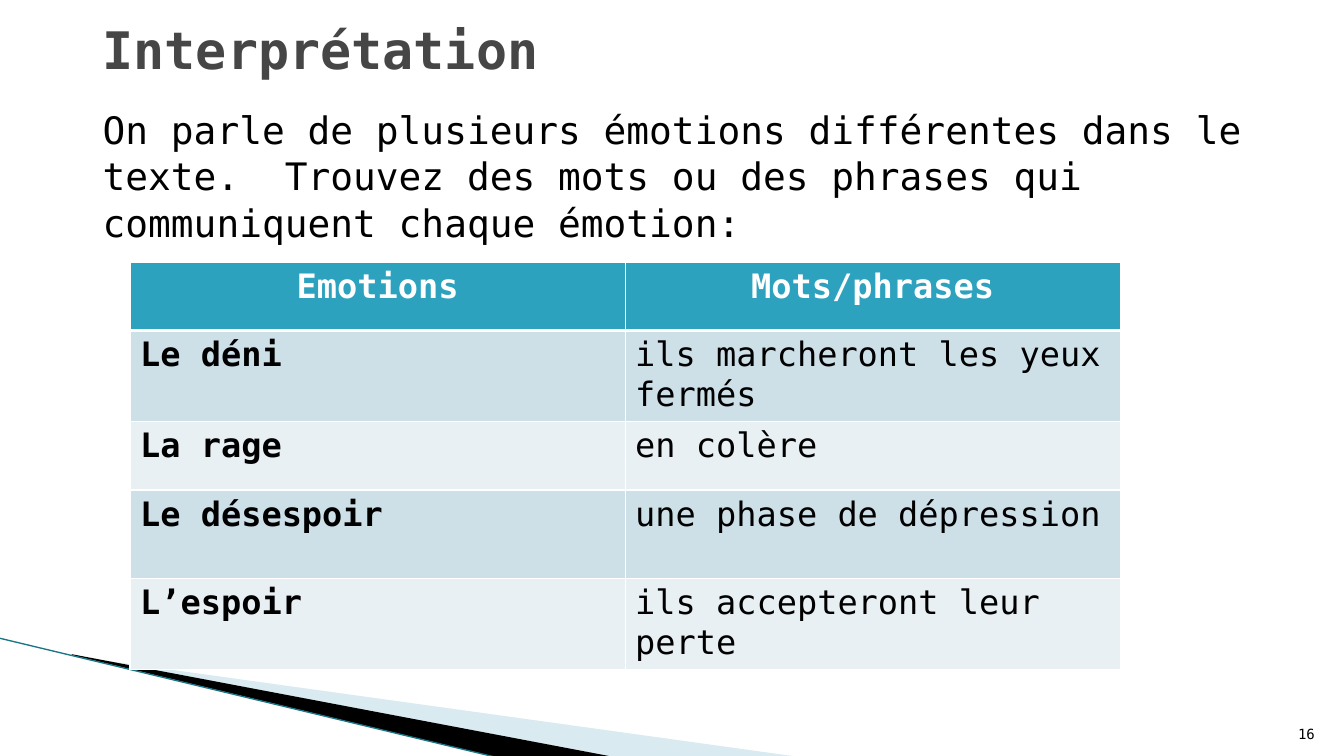
from lxml.etree import SubElement
from pptx import Presentation
from pptx.dml.color import RGBColor
from pptx.enum.shapes import MSO_CONNECTOR
from pptx.enum.text import MSO_ANCHOR, PP_ALIGN
from pptx.oxml.ns import qn
from pptx.util import Inches, Pt

COLORS = {
    "black": "000000",
    "white": "FFFFFF",
    "title": "464646",
    "header": "2DA2BF",
    "dark band": "CDE0E8",
    "light band": "E8F0F4",
    "pale wedge": "A0CBDC",
    "edge": "1B7587",
}
HEADINGS = ("Emotions", "Mots/phrases")
EMOTIONS = [
    ("Le déni", "ils marcheront les yeux fermés"),
    ("La rage", "en colère"),
    ("Le désespoir", "une phase de dépression"),
    ("L’espoir", "ils accepteront leur perte"),
]
ROW_HEIGHTS = (0.68, 0.87, 0.68, 0.88, 0.88)


class SlideBuilder:
    def __init__(self, page, font="DejaVu Sans Mono"):
        self.page = page
        self.font = font

    def color(self, name):
        return RGBColor.from_string(COLORS[name])

    def span(self, para, words, size, color="black", bold=False):
        span = para.add_run()
        span.text = words
        span.font.name = self.font
        span.font.size = Pt(size)
        span.font.bold = bold
        span.font.color.rgb = self.color(color)

    def text(self, words, place, size, color="black", bold=False,
             align=PP_ALIGN.LEFT, anchor=MSO_ANCHOR.TOP, spacing=1.0, top=0.05):
        frame = self.page.shapes.add_textbox(*map(Inches, place)).text_frame
        frame.word_wrap = True
        frame.vertical_anchor = anchor
        frame.margin_top = Inches(top)
        para = frame.paragraphs[0]
        para.alignment = align
        para.line_spacing = spacing
        self.span(para, words, size, color, bold)

    def wedge(self, points, color, opacity=100):
        corners = [(Inches(x), Inches(y)) for x, y in points]
        outline = self.page.shapes.build_freeform(*corners[0])
        outline.add_line_segments(corners[1:], close=True)
        shape = outline.convert_to_shape()
        shape.shadow.inherit = False
        shape.fill.solid()
        shape.fill.fore_color.rgb = self.color(color)
        shape.line.fill.background()
        if opacity < 100:
            tint = shape.fill._xPr.find(".//" + qn("a:srgbClr"))
            SubElement(tint, qn("a:alpha"), val=str(opacity * 1000))

    def line(self, start, end, color, width):
        line = self.page.shapes.add_connector(
            MSO_CONNECTOR.STRAIGHT, *map(Inches, start + end))
        line.line.color.rgb = self.color(color)
        line.line.width = Pt(width)
        SubElement(line._element.spPr, qn("a:effectLst"))

    def borders(self, cell, bottom):
        """Draw white cell borders; widths are in points."""
        properties = cell._tc.get_or_add_tcPr()
        for index, (side, width) in enumerate(
                (("lnL", 1), ("lnR", 1), ("lnT", 1), ("lnB", bottom))):
            border = properties.makeelement(qn(f"a:{side}"), {"w": str(Pt(width))})
            fill = SubElement(border, qn("a:solidFill"))
            SubElement(fill, qn("a:srgbClr"), val=COLORS["white"])
            properties.insert(index, border)

    def table(self, rows, place, heights, size):
        table = self.page.shapes.add_table(
            len(rows), len(rows[0]), *map(Inches, place)).table
        for r, row in enumerate(rows):
            table.rows[r].height = Inches(heights[r])
            header = r == 0
            band = "header" if header else "dark band" if r % 2 else "light band"
            for c, words in enumerate(row):
                cell = table.cell(r, c)
                cell.fill.solid()
                cell.fill.fore_color.rgb = self.color(band)
                self.borders(cell, 3 if header or r == 0 else 1)
                para = cell.text_frame.paragraphs[0]
                para.alignment = PP_ALIGN.CENTER if header else PP_ALIGN.LEFT
                self.span(para, words, size, "white" if header else "black",
                          bold=header or c == 0)


def main():
    deck = Presentation()
    deck.slide_width = Inches(13.33)
    deck.slide_height = Inches(7.5)
    builder = SlideBuilder(deck.slides.add_slide(deck.slide_layouts[6]))

    builder.wedge([(0.73, 6.51), (7.93, 7.51), (6.08, 7.51), (0.73, 6.5)],
                  "pale wedge", opacity=40)
    builder.wedge([(0.71, 6.49), (6.09, 7.51), (4.96, 7.52), (0.72, 6.5)], "black")
    builder.line((-0.01, 6.33), (4.95, 7.52), "edge", 0.95)

    builder.text("On parle de plusieurs émotions différentes dans le texte.  "
                 "Trouvez des mots ou des phrases qui communiquent chaque émotion:",
                 (0.92, 0.97, 11.5, 5.79), 27, spacing=1.03, top=0.07)
    builder.text("Interprétation", (0.92, 0.28, 11.5, 0.41), 36.9, "title",
                 bold=True, anchor=MSO_ANCHOR.MIDDLE)
    builder.table([HEADINGS, *EMOTIONS], (1.29, 2.6, 9.82, sum(ROW_HEIGHTS)),
                  ROW_HEIGHTS, 24)
    builder.text("16", (12.61, 7.01, 0.53, 0.4), 10,
                 align=PP_ALIGN.RIGHT, anchor=MSO_ANCHOR.BOTTOM)
    deck.save("out.pptx")


if __name__ == "__main__":
    main()
